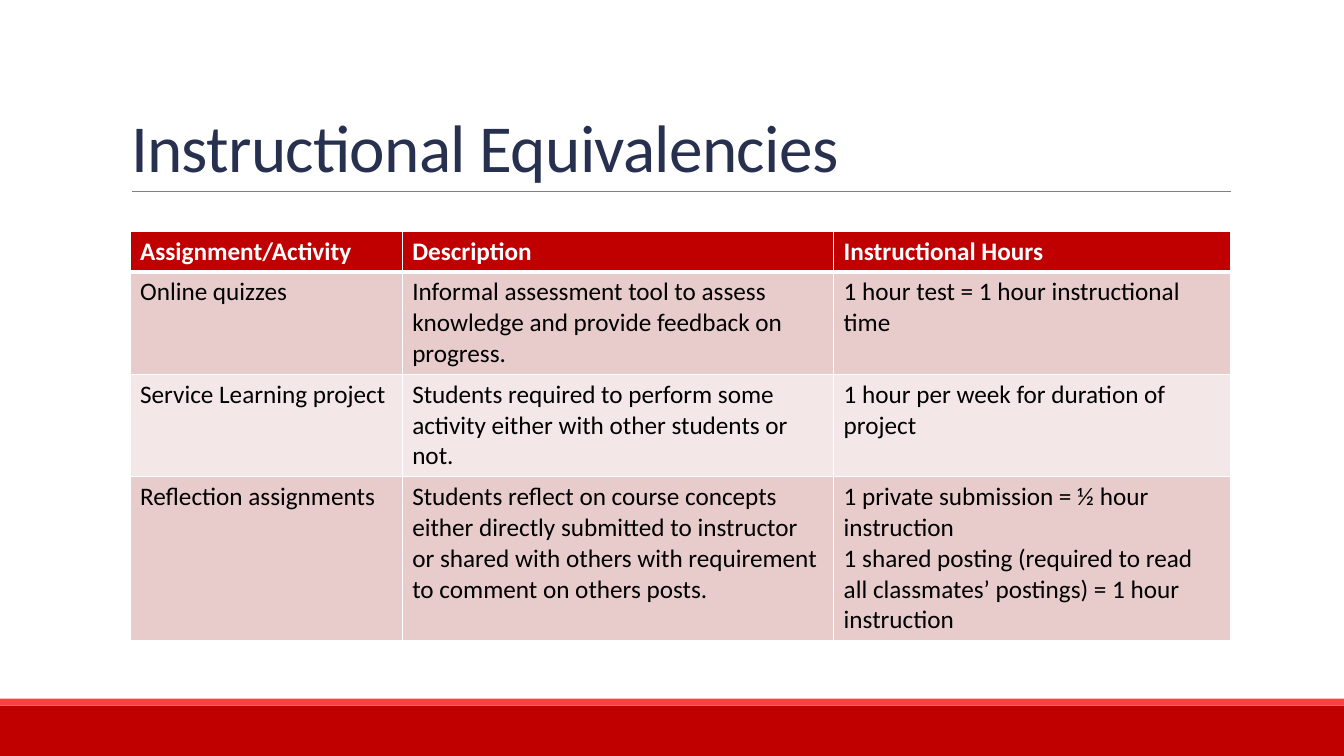
from lxml import etree
from pptx import Presentation
from pptx.dml.color import RGBColor
from pptx.enum.shapes import MSO_CONNECTOR, MSO_SHAPE
from pptx.enum.text import MSO_ANCHOR, MSO_AUTO_SIZE, PP_ALIGN
from pptx.oxml.ns import qn
from pptx.util import Pt

RECT = MSO_SHAPE.RECTANGLE
STRAIGHT = MSO_CONNECTOR.STRAIGHT
BOTTOM = MSO_ANCHOR.BOTTOM
LEFT = PP_ALIGN.LEFT
NO_FIT = MSO_AUTO_SIZE.NONE

TITLE = "Instructional Equivalencies"
HEADER = ["Assignment/Activity", "Description", "Instructional Hours"]
ACTIVITIES = [
    ["Online quizzes",
     "Informal assessment tool to assess knowledge and provide feedback on progress.",
     "1 hour test = 1 hour instructional time"],
    ["Service Learning project",
     "Students required to perform some activity either with other students or not.",
     "1 hour per week for duration of project"],
    ["Reflection assignments",
     "Students reflect on course concepts either directly submitted to instructor "
     "or shared with others with requirement to comment on others posts.",
     "1 private submission = ½ hour instruction\n"
     "1 shared posting (required to read all classmates’ postings) = 1 hour instruction"],
]
COLORS = {
    "red": "C00000", "stripe": "FF4040", "rule": "808080", "title": "27304E",
    "white": "FFFFFF", "black": "000000", "odd": "E8CCCC", "even": "F4E7E7",
}
FONT = "Calibri"
SLIDE_W, SLIDE_H = 960, 540
FOOTER_H, STRIPE_H = 36, 5
RULE_X1, RULE_X2, RULE_Y = 94.3, 879, 136.8
TABLE_X, TABLE_Y = 92.9, 165
COL_WIDTHS = [194.4, 308.2, 283.6]
ROW_HEIGHTS = [29.2, 73.2, 73.2, 116.4]


def rgb(name):
    return RGBColor.from_string(COLORS[name])


def write(tf, text, size=18, color="black", bold=False, line_spacing=None, tracking=None):
    """Fill a text frame, one paragraph per line of text."""
    for i, line in enumerate(text.split("\n")):
        p = tf.paragraphs[0] if i == 0 else tf.add_paragraph()
        p.alignment = LEFT
        if line_spacing:
            p.line_spacing = line_spacing
        r = p.add_run()
        r.text = line
        r.font.name, r.font.size, r.font.bold = FONT, Pt(size), bold
        r.font.color.rgb = rgb(color)
        if tracking:
            r.font._element.set("spc", str(round(tracking * 100)))


def add_bar(slide, top, height, color):
    sp = slide.shapes.add_shape(RECT, 0, Pt(top), Pt(SLIDE_W), Pt(height))
    sp.shadow.inherit = False
    sp.fill.solid()
    sp.fill.fore_color.rgb = rgb(color)
    sp.line.fill.background()


def add_rule(slide):
    line = slide.shapes.add_connector(STRAIGHT, Pt(RULE_X1), Pt(RULE_Y), Pt(RULE_X2), Pt(RULE_Y))
    line.line.color.rgb = rgb("rule")
    line.line.width = Pt(0.5)
    etree.SubElement(line._element.spPr, qn("a:effectLst"))


def set_borders(cell, top, bottom):
    """Draw white cell borders; top and bottom are widths in points."""
    tc_pr = cell._tc.get_or_add_tcPr()
    for i, (side, width) in enumerate([("L", 1), ("R", 1), ("T", top), ("B", bottom)]):
        ln = etree.Element(qn(f"a:ln{side}"), w=str(Pt(width)))
        fill = etree.SubElement(ln, qn("a:solidFill"))
        etree.SubElement(fill, qn("a:srgbClr"), val=COLORS["white"])
        tc_pr.insert(i, ln)


def add_activity_table(slide):
    rows = [HEADER] + ACTIVITIES
    table = slide.shapes.add_table(
        len(rows), len(HEADER), Pt(TABLE_X), Pt(TABLE_Y),
        Pt(sum(COL_WIDTHS)), Pt(sum(ROW_HEIGHTS))).table
    for column, width in zip(table.columns, COL_WIDTHS):
        column.width = Pt(width)
    for i, texts in enumerate(rows):
        table.rows[i].height = Pt(ROW_HEIGHTS[i])
        is_header = i == 0
        fill = "red" if is_header else "odd" if i % 2 else "even"
        for j, text in enumerate(texts):
            cell = table.cell(i, j)
            cell.fill.solid()
            cell.fill.fore_color.rgb = rgb(fill)
            set_borders(cell, top=3 if i == 1 else 1, bottom=3 if is_header else 1)
            write(cell.text_frame, text, color="white" if is_header else "black", bold=is_header)


def add_title(slide):
    title = slide.shapes.title
    title.left, title.top, title.width, title.height = Pt(86.4), Pt(22.6), Pt(792), Pt(114.2)
    tf = title.text_frame
    tf.word_wrap = True
    tf.auto_size = NO_FIT
    tf.vertical_anchor = BOTTOM
    write(tf, TITLE, size=48, color="title", line_spacing=0.85, tracking=-0.5)


def main():
    prs = Presentation()
    prs.slide_width, prs.slide_height = Pt(SLIDE_W), Pt(SLIDE_H)
    slide = prs.slides.add_slide(prs.slide_layouts[5])
    footer_top = SLIDE_H - FOOTER_H
    add_bar(slide, footer_top, FOOTER_H, "red")
    add_bar(slide, footer_top - STRIPE_H, STRIPE_H, "stripe")
    add_rule(slide)
    add_title(slide)
    add_activity_table(slide)
    prs.save("out.pptx")


if __name__ == "__main__":
    main()
